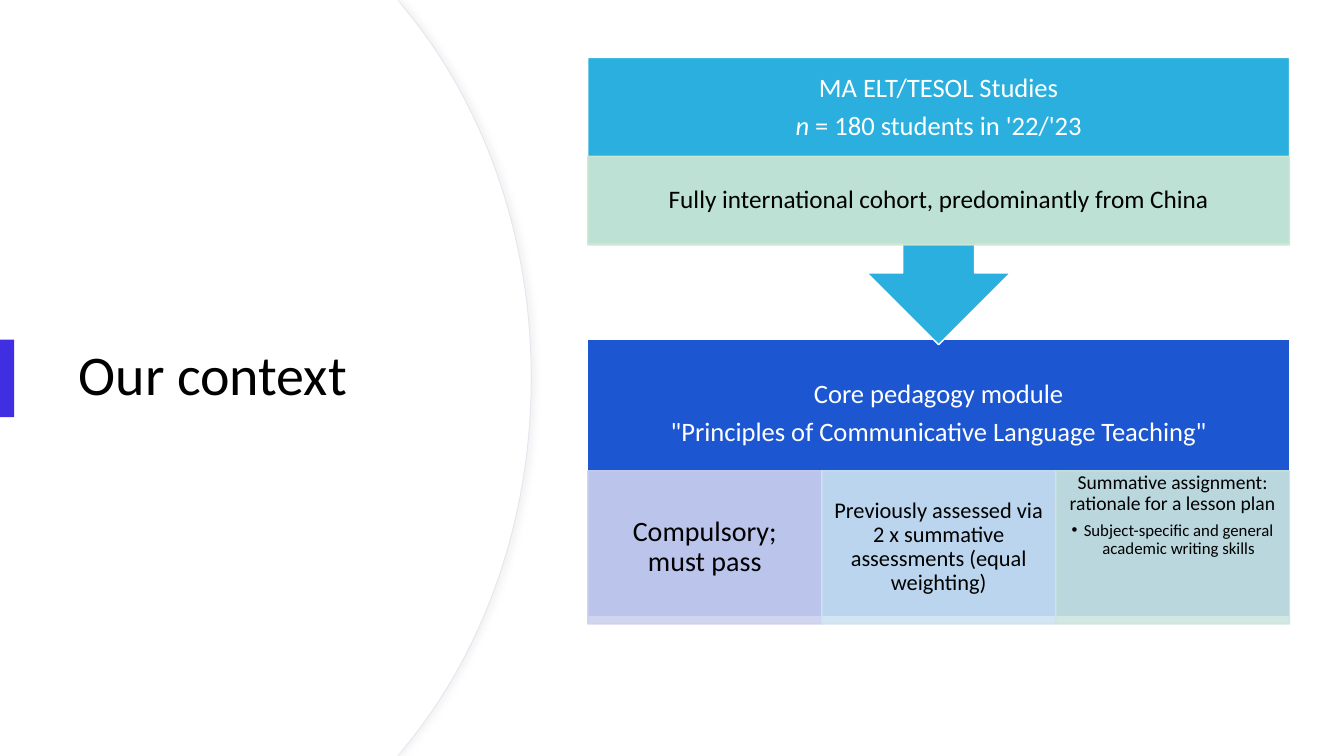
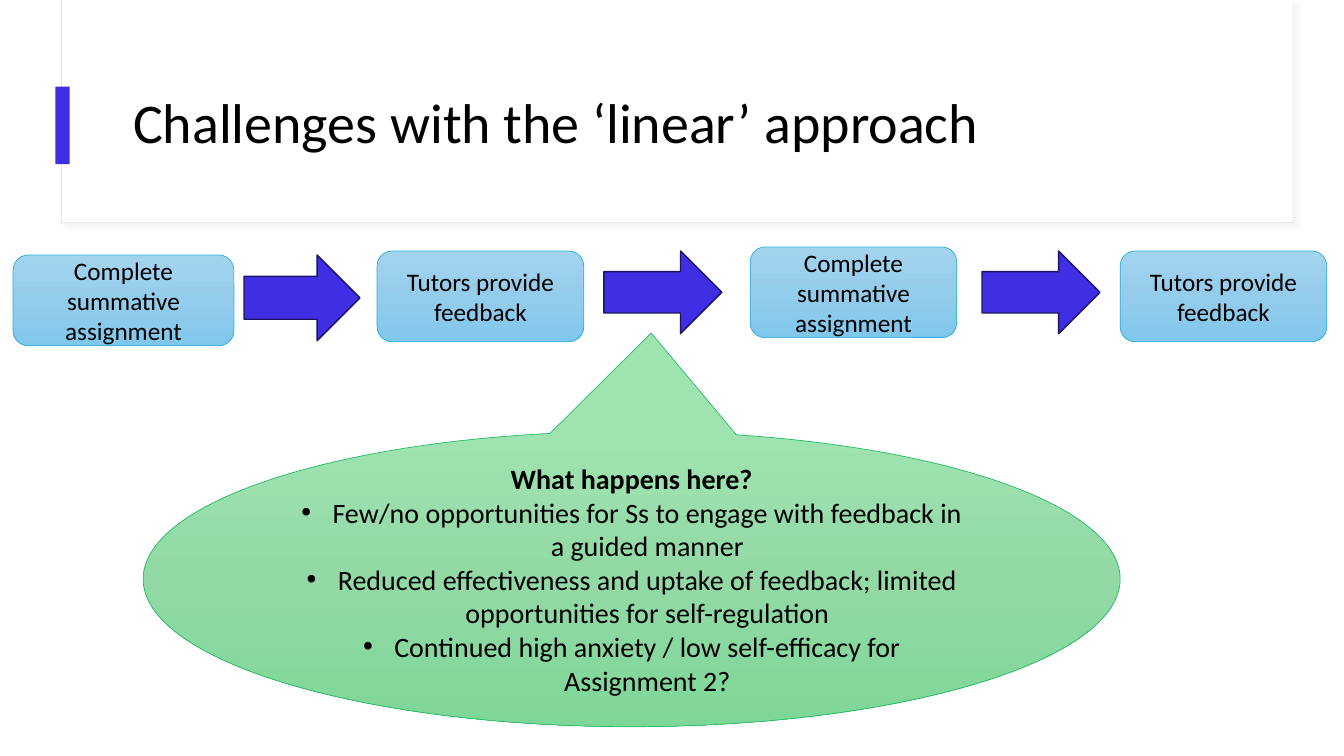
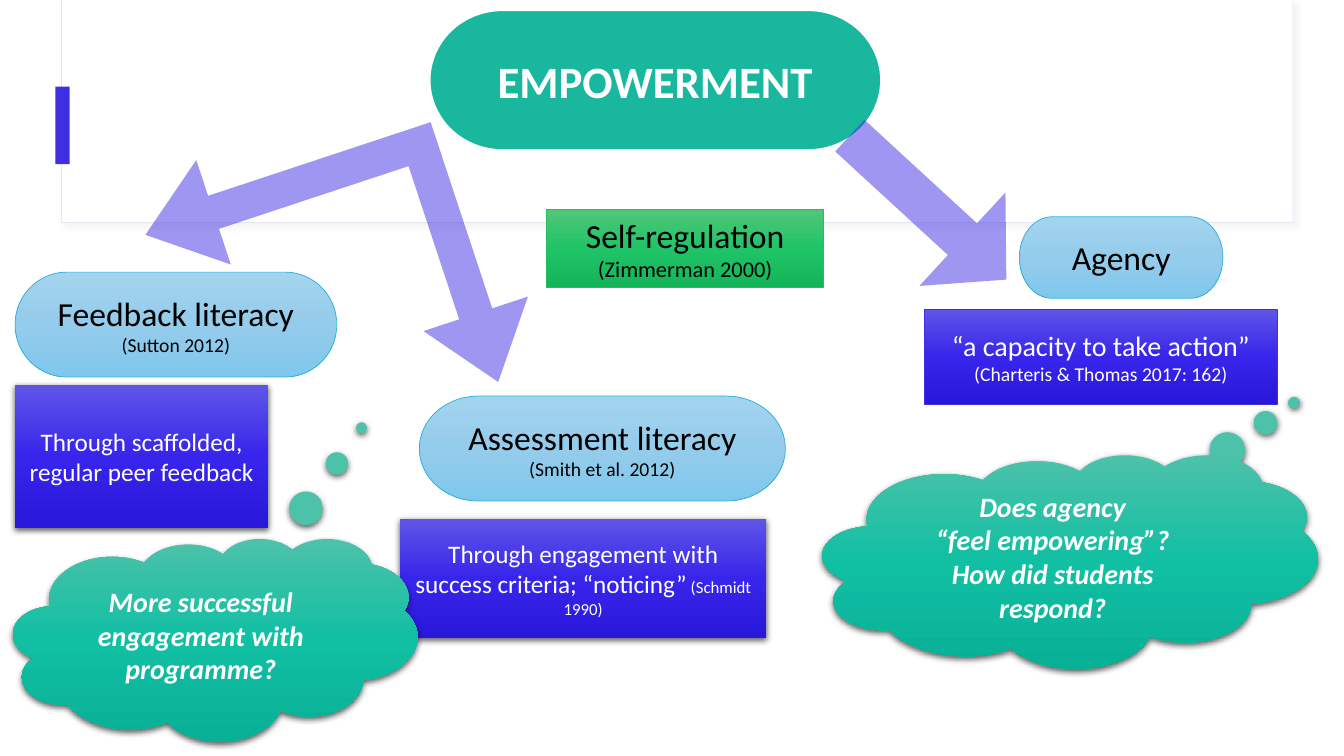
from lxml import etree
from pptx import Presentation
from pptx.dml.color import RGBColor
from pptx.enum.shapes import MSO_SHAPE as Preset
from pptx.enum.text import MSO_ANCHOR as Anchor, MSO_AUTO_SIZE as AutoSize, PP_ALIGN as Align
from pptx.oxml.ns import qn
from pptx.util import Inches, Pt

# Shared look
FONT = "Calibri"
WHITE, BLACK = "FFFFFF", "000000"
VIOLET, VIOLET_EDGE = "3F2EE2", "1C1463"
SKY, BLUE, TEAL = "2AAFDE", "1C56D0", "19B79E"
GREEN_EDGE, BAND_EDGE = "26BC67", "E4E7EF"
SKY_BLEND = ("A3D4EE", "94CCEB", "80C7EC")
MINT_BLEND = ("9FE3B1", "92D9A6", "7ED797")
GREEN_BLEND = ("51C679", "1FC466", "14B45A")
VIOLET_BLEND = ("5E55E7", "3825EB", "2917DB")
TEAL_BLEND = ("4DC2AA", "11BFA3", "08B196")

# Shadows: colour, opacity %, blur pt, distance pt, angle
BAND_SHADOW = ("D9D9D9", 30, 4, 3, 45)
CIRCLE_SHADOW = ("D9D9D9", 30, 4, 3, 0)
DROP_SHADOW = ("000000", 63, 4.5, 1.5, 90)

TITLE_ONLY, BLANK = 5, 6


def rgb(hex_color):
    return RGBColor.from_string(hex_color)


def set_fill(shape, fill):
    """Fill with one colour, or with a top-to-bottom blend of three."""
    if isinstance(fill, str):
        shape.fill.solid()
        shape.fill.fore_color.rgb = rgb(fill)
        return
    shape.fill.gradient()
    shape.fill.gradient_angle = 270
    stops = shape.element.spPr.find(qn("a:gradFill")).find(qn("a:gsLst"))
    for stop in list(stops):
        stops.remove(stop)
    for index, color in enumerate(fill):
        stop = etree.SubElement(stops, qn("a:gs"), pos=str(index * 50000))
        etree.SubElement(stop, qn("a:srgbClr"), val=color)


def set_opacity(shape, percent):
    for color in shape.element.spPr.iter(qn("a:srgbClr")):
        etree.SubElement(color, qn("a:alpha"), val=str(percent * 1000))


def set_shadow(shape, shadow):
    color, opacity, blur, distance, angle = shadow
    effects = shape.element.spPr.find(qn("a:effectLst"))
    outer = etree.SubElement(
        effects, qn("a:outerShdw"), blurRad=str(Pt(blur)), dist=str(Pt(distance)),
        dir=str(angle * 60000), algn="ctr", rotWithShape="0")
    tint = etree.SubElement(outer, qn("a:srgbClr"), val=color)
    etree.SubElement(tint, qn("a:alpha"), val=str(opacity * 1000))


def style_shape(shape, fill, line=None, width=0.5, opacity=None, shadow=None):
    shape.shadow.inherit = False
    set_fill(shape, fill)
    if line:
        shape.line.color.rgb = rgb(line)
        shape.line.width = Pt(width)
    else:
        shape.line.fill.background()
    if opacity:
        set_opacity(shape, opacity)
    if shadow:
        set_shadow(shape, shadow)
    return shape


def add_preset(slide, preset, box, fill, adjust=(), rotation=0, **style):
    shape = slide.shapes.add_shape(preset, *map(Inches, box))
    for index, value in enumerate(adjust):
        shape.adjustments[index] = value
    shape.rotation = rotation
    return style_shape(shape, fill, **style)


def format_run(run, size, color, bold=False, italic=False):
    run.font.name, run.font.size = FONT, Pt(size)
    run.font.color.rgb = rgb(color)
    run.font.bold, run.font.italic = bold, italic


def write_text(shape, lines, sizes, color=BLACK, align=Align.CENTER, anchor=Anchor.MIDDLE,
               bold=False, italic=False, spacing=None, gaps=None, insets=None):
    """Write one paragraph a line; sizes and gaps run along with the lines."""
    frame = shape.text_frame
    frame.text = "\n".join(lines)
    frame.word_wrap, frame.auto_size = True, AutoSize.NONE
    frame.vertical_anchor = anchor
    if insets:
        frame.margin_left = frame.margin_right = Inches(insets[0])
        frame.margin_top = frame.margin_bottom = Inches(insets[1])
    for index, paragraph in enumerate(frame.paragraphs):
        paragraph.alignment = align
        if spacing:
            paragraph.line_spacing = spacing
        if gaps:
            paragraph.space_after = Pt(gaps[index])
        for run in paragraph.runs:
            format_run(run, sizes[index], color, bold, italic)
    return frame.paragraphs


def add_run(paragraph, text, size, color):
    run = paragraph.add_run()
    run.text = text
    format_run(run, size, color)


def add_bullet(paragraph, indent):
    properties = paragraph._p.get_or_add_pPr()
    properties.set("marL", str(Inches(indent)))
    properties.set("indent", str(-Inches(indent)))
    etree.SubElement(properties, qn("a:buFont"), typeface="Arial")
    etree.SubElement(properties, qn("a:buChar"), char="•")


def add_accent(slide, left, top):
    add_preset(slide, Preset.RECTANGLE, (left, top, 0.14, 0.77), VIOLET)


def add_header_band(slide):
    add_preset(slide, Preset.RECTANGLE, (0.61, 0, 12.21, 2.21), WHITE,
               line=BAND_EDGE, width=0.75, shadow=BAND_SHADOW)
    add_preset(slide, Preset.RECTANGLE, (0.62, 0, 12.2, 2.2), WHITE)
    add_accent(slide, 0.55, 0.86)


def place_title(slide, text, box):
    """Format the title and bring it in front of what is drawn so far."""
    title = slide.shapes.title
    title.left, title.top, title.width, title.height = map(Inches, box)
    write_text(title, [text], [40], align=Align.LEFT, spacing=0.9)
    slide.shapes.element.append(title.element)


def add_arc_panel(slide, reach, **style):
    """White panel whose right edge bulges out to reach."""
    curve = ((reach - 1.26, 0.08), (reach - 0.48, 1.02), (reach, 2.32), (reach, 3.75))
    upper = []
    for step in range(25):
        t = step / 24
        weights = ((1 - t) ** 3, 3 * t * (1 - t) ** 2, 3 * t * t * (1 - t), t ** 3)
        upper.append(tuple(sum(w * point[axis] for w, point in zip(weights, curve))
                           for axis in (0, 1)))
    lower = [(x, 7.5 - y) for x, y in reversed(upper[:-1])]
    outline = [(3.94, 0), *upper, *lower, (3.94, 7.5), (0, 7.5)]
    builder = slide.shapes.build_freeform(0, 0)
    builder.add_line_segments([(Inches(x), Inches(y)) for x, y in outline], close=True)
    style_shape(builder.convert_to_shape(), WHITE, **style)


def add_heading(slide, box, lines):
    text_box = slide.shapes.add_textbox(*map(Inches, box))
    return write_text(text_box, lines, [19, 19], WHITE, spacing=0.9,
                      gaps=[6.65, 6.65], insets=(0.15, 0.15))


def add_tile(slide, box, color, lines, sizes, insets, anchor=Anchor.MIDDLE):
    tile = add_preset(slide, Preset.RECTANGLE, box, color, line=color, width=1, opacity=90)
    gaps = [round(size * 0.35, 2) for size in sizes]
    return write_text(tile, lines, sizes, spacing=0.9, gaps=gaps, insets=insets, anchor=anchor)


def build_context(presentation):
    slide = presentation.slides.add_slide(presentation.slide_layouts[TITLE_ONLY])
    add_arc_panel(slide, 5.27, line=BAND_EDGE, width=0.75, shadow=CIRCLE_SHADOW)
    add_arc_panel(slide, 5.26)
    place_title(slide, "Our context", (0.68, 1.27, 3.94, 4.95))
    add_accent(slide, 0, 3.37)

    # Module block and its three tiles
    left, width = 5.83, 6.96
    add_preset(slide, Preset.RECTANGLE, (left, 3.37, width, 2.75), BLUE, line=WHITE, width=1)
    add_heading(slide, (left, 3.37, width, 1.48),
                ["Core pedagogy module", '"Principles of Communicative Language Teaching"'])
    tiles = [
        ("CDD1EE", ["Compulsory; must pass"], [20], (0.16, 0.03), Anchor.MIDDLE),
        ("CDE3F2", ["Previously assessed via 2 x summative assessments (equal weighting)"],
         [16], (0.12, 0.02), Anchor.MIDDLE),
        ("CCE6DF", ["Summative assignment: rationale for a lesson plan",
                    "Subject-specific and general academic writing skills"],
         [14, 12], (0.11, 0.02), Anchor.TOP),
    ]
    tile_width = width / len(tiles)
    for index, (color, lines, sizes, insets, anchor) in enumerate(tiles):
        paragraphs = add_tile(slide, (left + index * tile_width, 4.67, tile_width, 1.52),
                              color, lines, sizes, insets, anchor)
    add_bullet(paragraphs[1], 0.12)

    # Programme block, pointing down to the module
    add_preset(slide, Preset.DOWN_ARROW_CALLOUT, (left, 0.57, width, 2.85), SKY,
               line=WHITE, width=1)
    students = add_heading(slide, (left, 0.57, width, 1), ["MA ELT/TESOL Studies", "n"])[1]
    students.runs[0].font.italic = True
    add_run(students, " = 180 students in '22/'23", 19, WHITE)
    add_tile(slide, (left, 1.55, width, 0.88), "CDE7D3",
             ["Fully international cohort, predominantly from China"], [18], (0.14, 0.03))


def build_challenges(presentation):
    slide = presentation.slides.add_slide(presentation.slide_layouts[TITLE_ONLY])
    add_header_band(slide)
    place_title(slide, "Challenges with the ‘linear’ approach", (1.22, 0.6, 11.12, 1.29))

    # Process row
    for box in ((2.42, 2.53, 1.15, 0.85), (5.99, 2.49, 1.17, 0.82), (9.74, 2.49, 1.17, 0.82)):
        add_preset(slide, Preset.RIGHT_ARROW, box, VIOLET, line=VIOLET_EDGE, width=1)
    steps = [
        (0.13, 2.53, 2.19, ["Complete summative", "assignment"]),
        (3.74, 2.49, 2.05, ["Tutors provide feedback"]),
        (7.44, 2.45, 2.05, ["Complete summative assignment"]),
        (11.11, 2.49, 2.05, ["Tutors provide feedback"]),
    ]
    for left, top, width, lines in steps:
        step = add_preset(slide, Preset.ROUNDED_RECTANGLE, (left, top, width, 0.9),
                          SKY_BLEND, line=SKY)
        write_text(step, lines, [18] * len(lines))

    # Question callout
    callout = add_preset(slide, Preset.OVAL_CALLOUT, (1.42, 4.28, 9.69, 2.93), MINT_BLEND,
                         adjust=(0.02, -0.833), line=GREEN_EDGE)
    question, *problems = write_text(callout, [
        "What happens here?",
        "Few/no opportunities for Ss to engage with feedback in a guided manner",
        "Reduced effectiveness and uptake of feedback; limited opportunities for self-regulation",
        "Continued high anxiety / low self-efficacy for Assignment 2?",
    ], [20] * 4)
    question.runs[0].font.bold = True
    for problem in problems:
        add_bullet(problem, 0.31)


def add_concept(slide, box, lines):
    concept = add_preset(slide, Preset.FLOWCHART_TERMINATOR, box, SKY_BLEND, line=SKY)
    write_text(concept, lines, [24, 14])


def add_note(slide, box, text, size, source=None, source_size=None, **style):
    note = add_preset(slide, Preset.RECTANGLE, box, VIOLET_BLEND, **style)
    paragraph = write_text(note, [text], [size], WHITE)[0]
    if source:
        add_run(paragraph, " " + source, source_size, WHITE)


def add_cloud(slide, box, adjust, lines):
    cloud = add_preset(slide, Preset.CLOUD_CALLOUT, box, TEAL_BLEND, adjust=adjust,
                       shadow=DROP_SHADOW)
    write_text(cloud, lines, [20] * len(lines), WHITE, bold=True, italic=True)


def build_empowerment(presentation):
    slide = presentation.slides.add_slide(presentation.slide_layouts[BLANK])
    add_header_band(slide)
    hub = add_preset(slide, Preset.FLOWCHART_TERMINATOR, (4.26, 0.1, 4.48, 1.39), TEAL,
                     line=WHITE, width=1.5)
    write_text(hub, ["EMPOWERMENT"], [32], WHITE, bold=True)

    # Concepts, notes and questions
    add_concept(slide, (10.11, 2.15, 2.02, 0.81), ["Agency"])
    add_note(slide, (9.17, 3.07, 3.5, 0.94), "“a capacity to take action”", 20,
             "(Charteris & Thomas 2017: 162)", 14, line=VIOLET)
    add_concept(slide, (0.15, 2.7, 3.19, 1.04), ["Feedback literacy", "(Sutton 2012)"])
    add_concept(slide, (4.16, 3.93, 3.63, 1.04), ["Assessment literacy", "(Smith et al. 2012)"])
    add_cloud(slide, (8.16, 4.51, 4.91, 2.12), (0.452, -0.743),
              ["Does agency", "“feel empowering”?", "How did students respond?"])
    add_note(slide, (3.97, 5.15, 3.63, 1.18),
             "Through engagement with success criteria; “noticing”", 18,
             "(Schmidt 1990)", 12, shadow=DROP_SHADOW)
    add_note(slide, (0.15, 3.82, 2.51, 1.42), "Through scaffolded, regular peer feedback", 18,
             shadow=DROP_SHADOW)
    add_cloud(slide, (0.13, 5.34, 4.01, 2.01), (0.362, -1.045),
              ["More successful engagement with programme?"])
    regulation = add_preset(slide, Preset.RECTANGLE, (5.42, 2.08, 2.75, 0.77), GREEN_BLEND,
                            line=GREEN_EDGE)
    write_text(regulation, ["Self-regulation", "(Zimmerman 2000)"], [24, 16], anchor=Anchor.TOP)

    # Arrows from the hub
    add_preset(slide, Preset.LEFT_UP_ARROW, (1.85, 1.01, 3.03, 3.41), VIOLET,
               adjust=(0.114, 0.18, 0.235), rotation=251.7, opacity=50)
    add_preset(slide, Preset.RIGHT_ARROW, (8.15, 1.43, 2.11, 1.26), VIOLET,
               adjust=(0.339, 0.47), rotation=42.6, opacity=50)


def main():
    presentation = Presentation()
    presentation.slide_width, presentation.slide_height = Inches(13.33), Inches(7.5)
    build_context(presentation)
    build_challenges(presentation)
    build_empowerment(presentation)
    presentation.save("out.pptx")


if __name__ == "__main__":
    main()
